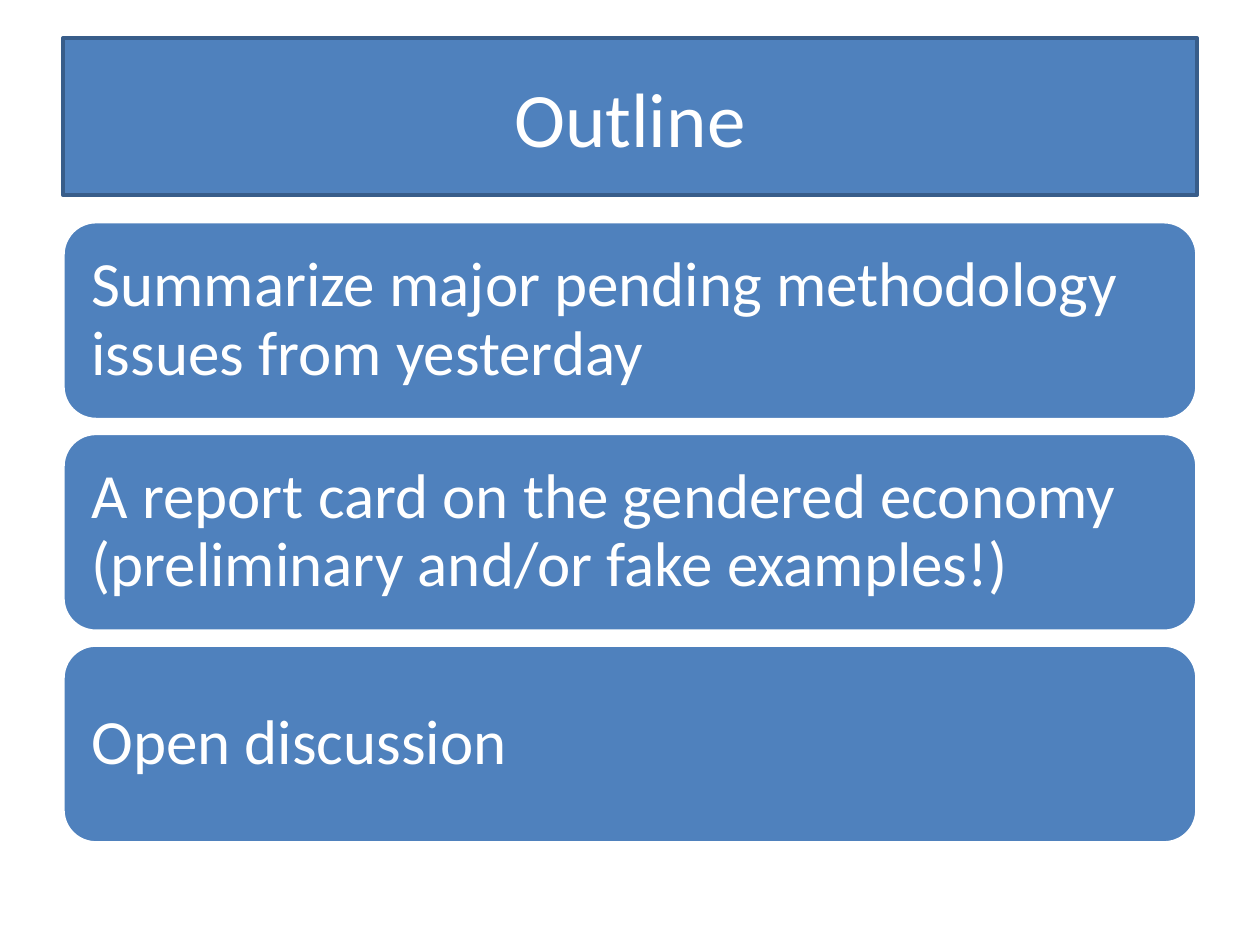
import pptx
import pptx.util
import pptx.dml.color
import pptx.enum.shapes
import pptx.enum.text
from pptx.util import Inches

BLUE = pptx.dml.color.RGBColor(0x4F, 0x81, 0xBD)
DARK_BLUE = pptx.dml.color.RGBColor(0x38, 0x5D, 0x8A)
WHITE = pptx.dml.color.RGBColor(0xFF, 0xFF, 0xFF)

SHAPES = pptx.enum.shapes.MSO_SHAPE
ALIGN = pptx.enum.text.PP_ALIGN

LEFT, WIDTH = 0.5, 9
FIRST_TOP, ITEM_HEIGHT, ITEM_STEP = 1.76, 1.57, 1.68
ITEMS = [
    "Summarize major pending methodology issues from yesterday",
    "A report card on the gendered economy (preliminary and/or fake examples!)",
    "Open discussion",
]


def add_panel(page, kind, top, height, text, size, line_color, align):
    """Add a full-width blue panel with white text and return it."""
    panel = page.shapes.add_shape(
        kind, Inches(LEFT), Inches(top), Inches(WIDTH), Inches(height))
    panel.shadow.inherit = False
    panel.fill.solid()
    panel.fill.fore_color.rgb = BLUE
    panel.line.color.rgb = line_color
    panel.line.width = pptx.util.Pt(2)

    frame = panel.text_frame
    frame.word_wrap = True
    frame.vertical_anchor = pptx.enum.text.MSO_ANCHOR.MIDDLE
    para = frame.paragraphs[0]
    para.text = text
    para.alignment = align
    para.font.name = "Calibri"
    para.font.size = pptx.util.Pt(size)
    para.font.color.rgb = WHITE
    return panel


def add_title(page, text):
    add_panel(page, SHAPES.RECTANGLE, 0.3, 1.25, text, 44, DARK_BLUE, ALIGN.CENTER)


def add_item(page, top, text):
    panel = add_panel(page, SHAPES.ROUNDED_RECTANGLE, top, ITEM_HEIGHT,
                      text, 36, WHITE, ALIGN.LEFT)
    frame = panel.text_frame
    frame.margin_left = frame.margin_right = Inches(0.15)
    frame.margin_top = frame.margin_bottom = Inches(0.15)
    frame.paragraphs[0].line_spacing = 0.9


def main():
    deck = pptx.Presentation()
    deck.slide_width, deck.slide_height = Inches(10), Inches(7.5)
    page = deck.slides.add_slide(deck.slide_layouts[6])

    # Heading
    add_title(page, "Outline")

    # Outline items, evenly stacked
    for row, text in enumerate(ITEMS):
        add_item(page, FIRST_TOP + row * ITEM_STEP, text)

    deck.save("out.pptx")


if __name__ == "__main__":
    main()
